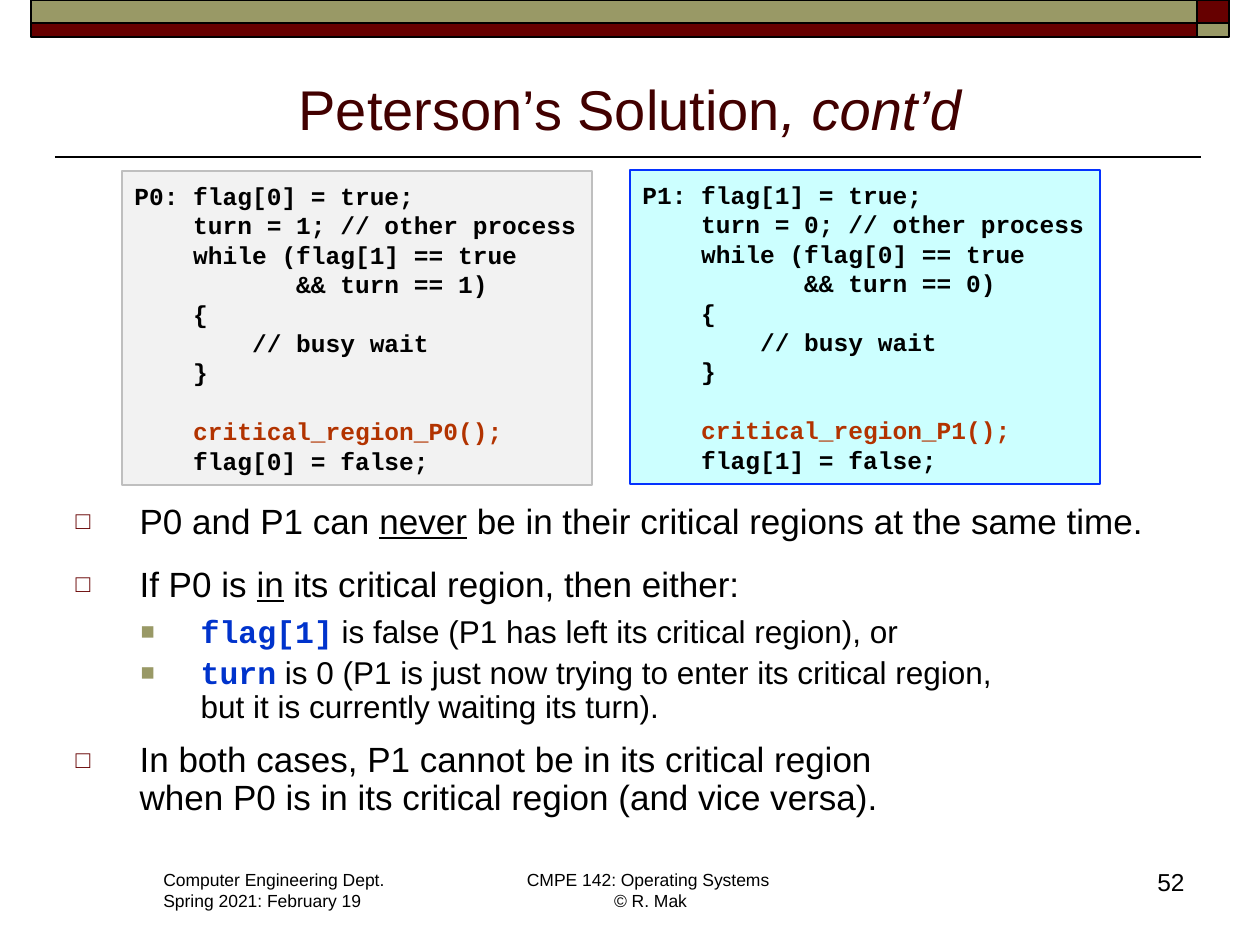
from dataclasses import dataclass

from lxml import etree
from pptx import Presentation
from pptx import util as u
from pptx.dml.color import RGBColor
from pptx.enum import shapes, text
from pptx.oxml.ns import qn

EMU_PER_PX = 914400 / 126


@dataclass(frozen=True)
class Theme:
    sans: str = "Arial"
    mono: str = "Courier New"
    ink: str = "000000"
    title: str = "420000"
    maroon: str = "660000"
    olive: str = "999966"
    keyword: str = "0033CC"
    critical: str = "B23300"
    p0_fill: str = "F2F2F2"
    p0_edge: str = "BFBFBF"
    p1_fill: str = "CCFFFF"
    p1_edge: str = "0432FF"
    title_pt: int = 32
    body_pts: tuple = (20, 18)
    code_pt: int = 14
    code_line_pt: float = 16.8
    number_pt: int = 14
    footer_pt: int = 10


THEME = Theme()

# Per outline level: hanging text position, hang, bullet, bullet colour, bullet size
LEVELS = [
    (64, 64, "□", THEME.maroon, 70),
    (125, 60, "■", THEME.olive, 75),
]

# Level, space before in points, runs as (text, style)
POINTS = [
    (0, 0, [("P0 and P1 can ", ""), ("never", "underline"),
            (" be in their critical regions at the same time.", "")]),
    (0, 14.4, [("If P0 is ", ""), ("in", "underline"),
               (" its critical region, then either:", "")]),
    (1, 6.5, [("flag[1]", "code"),
              (" is false (P1 has left its critical region), or", "")]),
    (1, 4, [("turn", "code"),
            (" is 0 (P1 is just now trying to enter its critical region, \n"
             "but it is currently waiting its turn).", "")]),
    (0, 9.8, [("In both cases, P1 cannot be in its critical region \n"
               "when P0 is in its critical region (and vice versa).", "")]),
]


def px(length):
    return u.Emu(round(length * EMU_PER_PX))


def box(*lengths):
    return [px(length) for length in lengths]


def style(font, size, color=THEME.ink, name=THEME.sans, bold=False):
    font.name, font.size, font.bold = name, u.Pt(size), bold
    font.color.rgb = RGBColor.from_string(color)


def add_rect(slide, bounds, fill, edge, weight):
    rect = slide.shapes.add_shape(shapes.MSO_SHAPE.RECTANGLE, *box(*bounds))
    rect.shadow.inherit = False
    rect.fill.solid()
    rect.fill.fore_color.rgb = RGBColor.from_string(fill)
    rect.line.color.rgb = RGBColor.from_string(edge)
    rect.line.width = u.Pt(weight)
    return rect


def add_banner(slide):
    """Two stacked bars whose colours swap in the narrow right column."""
    rows = [(0, 23, THEME.olive, THEME.maroon), (23, 14, THEME.maroon, THEME.olive)]
    for top, height, wide, narrow in rows:
        add_rect(slide, (31, top, 1166, height), wide, THEME.ink, 1)
        add_rect(slide, (1197, top, 32, height), narrow, THEME.ink, 1)


def add_title_rule(slide):
    rule = slide.shapes.add_connector(
        shapes.MSO_CONNECTOR.STRAIGHT, *box(55, 157, 1201, 157))
    rule.line.color.rgb = RGBColor.from_string(THEME.ink)
    rule.line.width = u.Pt(1)
    etree.SubElement(rule._element.spPr, qn("a:effectLst"))


def place(placeholder, bounds, anchor):
    placeholder.left, placeholder.top, placeholder.width, placeholder.height = box(*bounds)
    frame = placeholder.text_frame
    frame.auto_size = text.MSO_AUTO_SIZE.NONE
    frame.vertical_anchor = anchor
    return frame


def fill_title(slide):
    frame = place(slide.shapes.title, (63, 57, 1134, 91), text.MSO_ANCHOR.BOTTOM)
    heading = frame.paragraphs[0]
    heading.alignment = text.PP_ALIGN.CENTER
    for words, italic in [("Peterson’s Solution", False), (", cont’d", True)]:
        run = heading.add_run()
        run.text = words
        style(run.font, THEME.title_pt, THEME.title)
        run.font.italic = italic


def set_bullet(paragraph, level):
    indent, hang, char, color, percent = LEVELS[level]
    props = paragraph._p.get_or_add_pPr()
    props.set("marL", str(px(indent)))
    props.set("indent", str(-px(hang)))
    tint = etree.SubElement(props, qn("a:buClr"))
    etree.SubElement(tint, qn("a:srgbClr"), val=color)
    etree.SubElement(props, qn("a:buSzPct"), val=str(percent * 1000))
    etree.SubElement(props, qn("a:buFont"), typeface=THEME.sans)
    etree.SubElement(props, qn("a:buChar"), char=char)


def add_words(paragraph, words, kind, size):
    for number, line in enumerate(words.split("\n")):
        if number:
            paragraph.add_line_break()
        run = paragraph.add_run()
        run.text = line
        if kind == "code":
            style(run.font, size, THEME.keyword, THEME.mono, bold=True)
        else:
            style(run.font, size)
            run.font.underline = kind == "underline"


def fill_points(slide):
    frame = place(slide.placeholders[1], (63, 498, 1134, 340), text.MSO_ANCHOR.TOP)
    for number, (level, gap, runs) in enumerate(POINTS):
        point = frame.add_paragraph() if number else frame.paragraphs[0]
        point.level = level
        set_bullet(point, level)
        point.line_spacing = 0.9
        point.space_before = u.Pt(gap)
        size = THEME.body_pts[level]
        style(point.font, size)
        for words, kind in runs:
            add_words(point, words, kind, size)


def add_process_code(slide, bounds, me, fill, edge):
    """Code of process `me`; the other process has the opposite number."""
    other = 1 - me
    critical = f"    critical_region_P{me}();"
    lines = [
        f"P{me}: flag[{me}] = true;",
        f"    turn = {other}; // other process",
        f"    while (flag[{other}] == true",
        f"           && turn == {other})",
        "    {",
        "        // busy wait",
        "    }",
        critical,
        f"    flag[{me}] = false;",
    ]
    frame = add_rect(slide, bounds, fill, edge, 0.75).text_frame
    frame.word_wrap = False
    frame.vertical_anchor = text.MSO_ANCHOR.MIDDLE
    frame.text = "\n".join(lines)
    for line in frame.paragraphs:
        is_critical = line.text == critical
        line.alignment = text.PP_ALIGN.LEFT
        line.line_spacing = u.Pt(THEME.code_line_pt)
        line.space_before = u.Pt(THEME.code_line_pt if is_critical else 0)
        color = THEME.critical if is_critical else THEME.ink
        style(line.runs[0].font, THEME.code_pt, color, THEME.mono, bold=True)


def add_footer(slide, bounds, words, size, alignment):
    frame = slide.shapes.add_textbox(*box(*bounds)).text_frame
    frame.word_wrap = True
    frame.text = words
    for line in frame.paragraphs:
        line.alignment = alignment
        style(line.runs[0].font, size)


def main():
    deck = Presentation()
    deck.slide_width, deck.slide_height = box(1260, 945)
    slide = deck.slides.add_slide(deck.slide_layouts[1])
    add_banner(slide)
    add_title_rule(slide)
    fill_title(slide)
    fill_points(slide)
    add_process_code(slide, (122, 171, 470, 314), 0, THEME.p0_fill, THEME.p0_edge)
    add_process_code(slide, (630, 170, 470, 314), 1, THEME.p1_fill, THEME.p1_edge)
    align = text.PP_ALIGN
    add_footer(slide, (151, 863, 250, 55),
               "Computer Engineering Dept.\nSpring 2021: February 19",
               THEME.footer_pt, align.LEFT)
    add_footer(slide, (513, 863, 275, 55),
               "CMPE 142: Operating Systems \n© R. Mak",
               THEME.footer_pt, align.CENTER)
    add_footer(slide, (1096, 861, 101, 63), "52", THEME.number_pt, align.RIGHT)
    deck.save("out.pptx")


if __name__ == "__main__":
    main()
